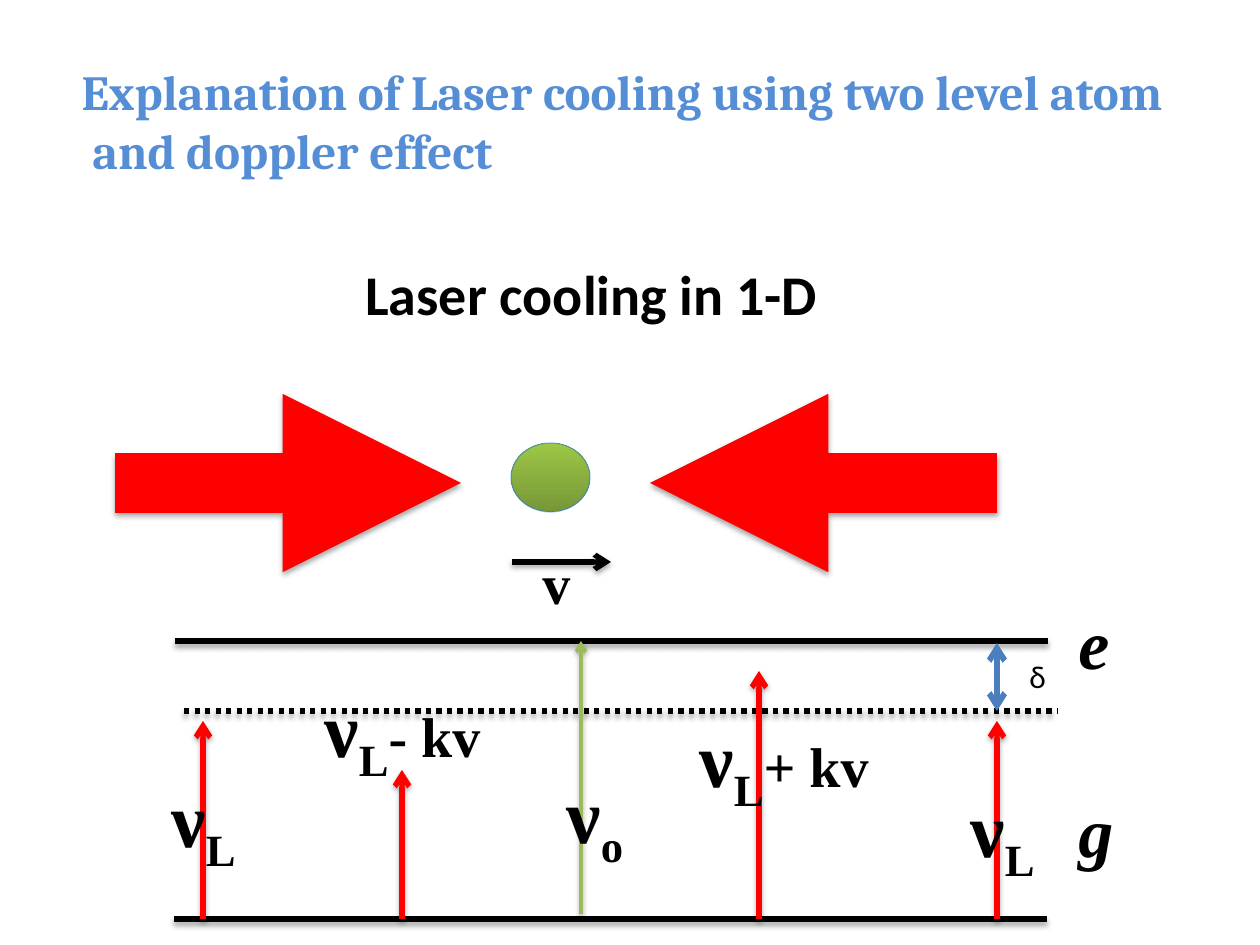
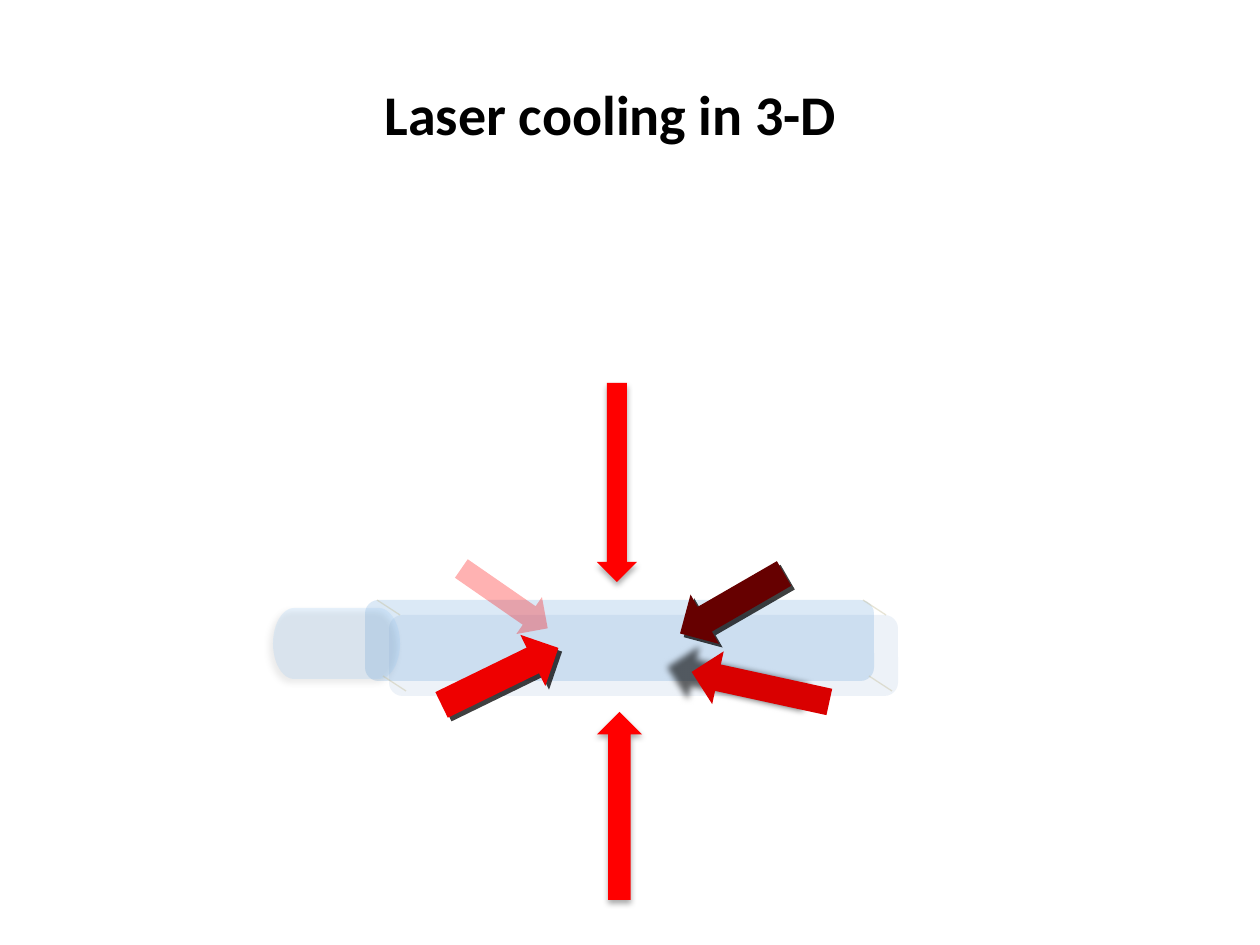
import pptx
import pptx.dml.color
import pptx.enum.dml
import pptx.enum.shapes
import pptx.enum.text
import pptx.oxml.ns
import pptx.util
import lxml.etree

PX = 914400 // 126
BLACK, RED, GREEN, BLUE, TITLE_BLUE = "000000", "FF0000", "9BBB59", "4B7EBC", "558ED5"
SERIF, SANS, TITLE_FONT = "Times New Roman", "Calibri", "Cambria"
LINE_SHADOW = (35, 3.1, 1.8, 90)
BLOCK_SHADOW = (32, 3.5, 2.2, 90)
MSO = pptx.enum.shapes.MSO_SHAPE
STRAIGHT = pptx.enum.shapes.MSO_CONNECTOR.STRAIGHT
qn = pptx.oxml.ns.qn


def paint(fill, color, alpha=100):
    fill.solid()
    fill.fore_color.rgb = pptx.dml.color.RGBColor.from_string(color)
    if alpha < 100:
        clr = fill._xPr.find(".//" + qn("a:srgbClr"))
        lxml.etree.SubElement(clr, qn("a:alpha"), val=str(alpha * 1000))


def set_shadow(sp, shadow=None):
    effects = lxml.etree.SubElement(sp._element.spPr, qn("a:effectLst"))
    if shadow:
        alpha, blur, dist, angle = shadow
        outer = lxml.etree.SubElement(
            effects, qn("a:outerShdw"), blurRad=str(int(blur * 12700)),
            dist=str(int(dist * 12700)), dir=str(angle * 60000), rotWithShape="0")
        clr = lxml.etree.SubElement(outer, qn("a:srgbClr"), val=BLACK)
        lxml.etree.SubElement(clr, qn("a:alpha"), val=str(alpha * 1000))


prs = pptx.Presentation()
prs.slide_width = pptx.util.Inches(10)
prs.slide_height = pptx.util.Inches(7.5)
s1, s2 = [prs.slides.add_slide(prs.slide_layouts[5]) for _ in range(2)]

TOP, DETUNED, GROUND = 641, 711, 919
lines = [
    (s1, 115, 483, 461, 483, RED, 34, "", "triangle", LINE_SHADOW),
    (s1, 997, 483, 650, 483, RED, 34, "", "triangle", LINE_SHADOW),
    (s1, 175, TOP, 1048, TOP, BLACK, 3, "", "", LINE_SHADOW),
    (s1, 174, GROUND, 1047, GROUND, BLACK, 3, "", "", LINE_SHADOW),
    (s1, 184, DETUNED, 1057, DETUNED, BLACK, 3, "", "", LINE_SHADOW),
    (s1, 581, 914, 581, TOP, GREEN, 2, "", "arrow", LINE_SHADOW),
    (s1, 203, GROUND, 203, 721, RED, 3, "", "arrow", LINE_SHADOW),
    (s1, 997, GROUND, 997, 721, RED, 3, "", "arrow", LINE_SHADOW),
    (s1, 402, GROUND, 402, 770, RED, 3, "", "arrow", LINE_SHADOW),
    (s1, 759, GROUND, 759, 671, RED, 3, "", "arrow", LINE_SHADOW),
    (s1, 512, 562, 611, 562, BLACK, 3, "", "arrow", LINE_SHADOW),
    (s1, 997, 643, 997, DETUNED, BLUE, 3.25, "arrow", "arrow", None),
]

blocks = [
    (MSO.ROUNDED_RECTANGLE, 365, 600, 509, 81, 0, "0F6FC6", 15, None),
    (MSO.ROUNDED_RECTANGLE, 389, 615, 509, 81, 0, "4F81BD", 10, None),
    (MSO.FLOWCHART_MAGNETIC_DISK, 301, 580, 71, 127, 90, "91C6F7", 20, (40, 4, 3, 135)),
    (MSO.DOWN_ARROW, 597, 383, 40, 199, 0, RED, 100, BLOCK_SHADOW),
    (MSO.UP_ARROW, 597, 712, 45, 188, 0, RED, 100, BLOCK_SHADOW),
    (MSO.RIGHT_ARROW, 435, 648, 130, 57, 334, "EE0000", 100, (75, 0, 3, 45)),
    (MSO.RIGHT_ARROW, 672, 575, 120, 57, 150, "660000", 100, (75, 0, 3, 45)),
    (MSO.LEFT_ARROW, 690, 660, 141, 54, 12.3, "D90000", 100, (60, 4, 14, 192)),
    (MSO.RIGHT_ARROW, 452, 576, 105, 45, 34.7, RED, 30, None),
]
for kind, x, y, w, h, angle, color, alpha, shadow in blocks:
    sp = s2.shapes.add_shape(kind, x * PX, y * PX, w * PX, h * PX)
    sp.rotation = angle
    paint(sp.fill, color, alpha)
    sp.line.fill.background()
    set_shadow(sp, shadow)

for x, y in [(863, 600), (869, 676), (377, 600), (383, 676)]:
    lines.append((s2, x, y, x + 23, y + 15, "C4BD97", 0.75, "", "", None))

for s, x1, y1, x2, y2, color, width, head, tail, shadow in lines:
    c = s.shapes.add_connector(STRAIGHT, x1 * PX, y1 * PX, x2 * PX, y2 * PX)
    paint(c.line.fill, color, 40 if s is s2 else 100)
    c.line.width = pptx.util.Pt(width)
    if y1 == y2 == DETUNED:
        c.line.dash_style = pptx.enum.dml.MSO_LINE.ROUND_DOT
    ln = c._element.spPr.find(qn("a:ln"))
    for tag, end in [("a:headEnd", head), ("a:tailEnd", tail)]:
        if end:
            lxml.etree.SubElement(ln, qn(tag), type=end)
    set_shadow(c, shadow)

atom = s1.shapes.add_shape(MSO.OVAL, 511 * PX, 443 * PX, 79 * PX, 69 * PX)
atom.fill.gradient()
atom.fill.gradient_angle = 90
for stop, color in zip(atom.fill.gradient_stops, ["779737", "9DC746"]):
    stop.color.rgb = pptx.dml.color.RGBColor.from_string(color)
paint(atom.line.fill, "0066FF", 39)
atom.line.width = pptx.util.Pt(0.75)
set_shadow(atom)

labels = [
    (353, 253, 481, 81, [("Laser cooling in 1-D", 32)], SANS, True, False),
    (530, 542, 54, 81, [("v", 32)], SERIF, True, False),
    (958, 774, 95, 106, [("ν", 44), ("L", 44)], SERIF, True, False),
    (159, 764, 95, 106, [("ν", 44), ("L", 44)], SERIF, True, False),
    (554, 760, 86, 106, [("ν", 44), ("o", 44)], SERIF, True, False),
    (312, 674, 188, 106, [("ν", 44), ("L", 44), ("- kv", 32)], SERIF, True, False),
    (687, 704, 200, 106, [("ν", 44), ("L", 44), ("+ kv", 32)], SERIF, True, False),
    (1066, 593, 57, 97, [("e", 40)], SERIF, True, True),
    (1066, 781, 60, 97, [("g", 40)], SERIF, True, True),
    (1017, 651, 42, 50, [("δ", 18)], SANS, False, False),
]
for x, y, w, h, runs, font, bold, italic in labels:
    tb = s1.shapes.add_textbox(x * PX, y * PX, w * PX, h * PX)
    tb.text_frame.word_wrap = False
    p = tb.text_frame.paragraphs[0]
    for text, size in runs:
        r = p.add_run()
        r.text = text
        r.font.size = pptx.util.Pt(size)
        r.font.name = font
        r.font.bold = bold
        r.font.italic = italic
        paint(r.font.fill, BLACK)
        if text in ("L", "o"):
            r.font._element.set("baseline", "-25000")

titles = [
    (s1, 69, 55, 1155, 131, "Explanation of Laser cooling using two level atom\n and doppler effect",
     28, TITLE_FONT, TITLE_BLUE),
    (s2, 372, 73, 546, 81, "Laser cooling in 3-D", 32, SANS, BLACK),
]
for s, x, y, w, h, text, size, font, color in titles:
    sp = s.shapes.title
    sp.left, sp.top, sp.width, sp.height = x * PX, y * PX, w * PX, h * PX
    tf = sp.text_frame
    tf.text = text
    tf.word_wrap = s is s2
    tf.auto_size = pptx.enum.text.MSO_AUTO_SIZE.NONE
    tf.vertical_anchor = pptx.enum.text.MSO_ANCHOR.TOP
    for p in tf.paragraphs:
        p.alignment = pptx.enum.text.PP_ALIGN.LEFT
        for r in p.runs:
            r.font.size = pptx.util.Pt(size)
            r.font.name = font
            r.font.bold = True
            paint(r.font.fill, color)

prs.save("out.pptx")
